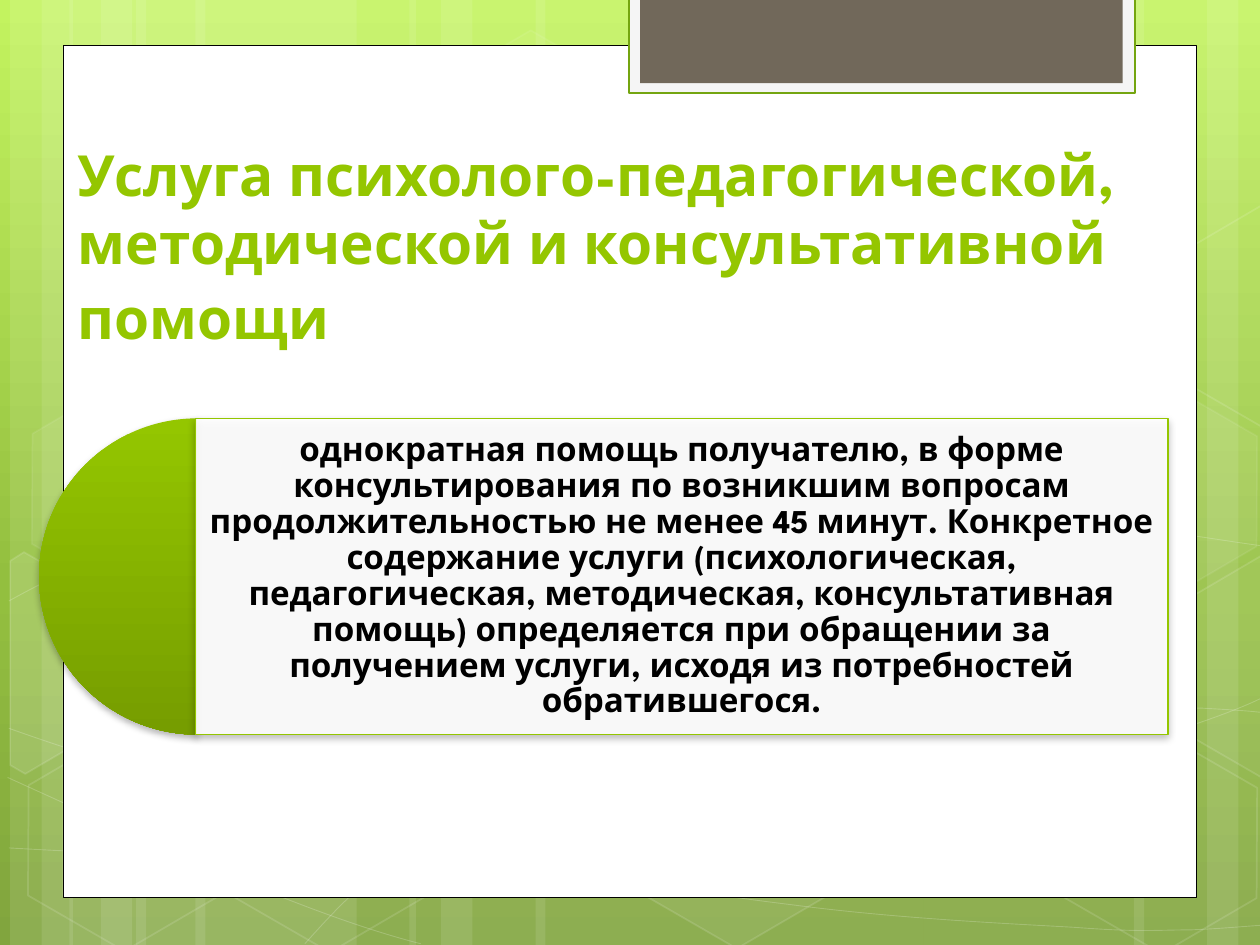
from copy import deepcopy
from dataclasses import dataclass
from math import cos, radians, sin
from lxml.etree import SubElement
from pptx import Presentation
from pptx.dml.color import RGBColor
from pptx.enum.shapes import MSO_SHAPE
from pptx.enum.text import MSO_ANCHOR, PP_ALIGN
from pptx.oxml.ns import qn
from pptx.util import Inches, Pt

WHITE = RGBColor(0xFF, 0xFF, 0xFF)
BLACK = RGBColor(0x00, 0x00, 0x00)
LIME = RGBColor(0x94, 0xC6, 0x00)
DARK_LIME = RGBColor(0x76, 0x9D, 0x00)
TAB_GREEN = RGBColor(0x74, 0xA5, 0x10)
TAB_GREY = RGBColor(0xF5, 0xF5, 0xF5)
TAB_BROWN = RGBColor(0x71, 0x68, 0x5A)
SKY = [(0, RGBColor(0xC3, 0xF3, 0x5F)), (0.62, RGBColor(0x93, 0xBF, 0x3F)),
       (1, RGBColor(0x81, 0xA5, 0x3E))]
FONT = "League Spartan"
TILT = 30
TITLE = "Услуга психолого-педагогической, методической и консультативной помощи"
BODY = ("однократная помощь получателю, в форме консультирования по возникшим вопросам "
        "продолжительностью не менее 45 минут. Конкретное содержание услуги (психологическая, "
        "педагогическая, методическая, консультативная помощь) определяется при обращении за "
        "получением услуги, исходя из потребностей обратившегося.")


@dataclass
class Style:
    fill: RGBColor | None = None
    fill_alpha: int = 100
    line: RGBColor | None = None
    line_width: float = 1
    line_alpha: int = 100


@dataclass
class Hexagon:
    left: float
    top: float
    fill_alpha: int
    line_alpha: int


@dataclass
class CutHexagon:
    center: tuple
    fill_alpha: int
    corners: list


@dataclass
class Wave:
    knots: list
    straight: int | None = None


STRIPES = [(1.08, 1.75), (0.08, 0.5), (0.33, 0.83), (1.55, 1.75), (0.55, 0.5), (0.8, 0.83),
           (7.33, 1.75), (9.58, 0.5), (9, 0.83), (4.25, 3.08), (3.25, 0.5), (3.5, 0.83)]
WAVES = [
    Wave([(0.07, 6.73), (0.61, 6.76), (1.15, 6.79), (1.9, 6.78), (2.65, 6.77), (3.58, 6.75),
          (4.58, 6.65), (5.58, 6.55), (7, 6.36), (7.92, 6.17), (8.83, 5.98), (9.77, 5.68),
          (10.07, 5.51)]),
    Wave([(0.07, 4.77), (0.36, 4.61), (0.65, 4.46), (1.21, 4.31), (1.78, 4.16), (2.59, 3.94),
          (3.47, 3.87), (4.36, 3.8), (5.44, 3.79), (6.54, 3.87), (7.64, 3.95), (9.47, 4.26),
          (10.07, 4.34)]),
    Wave([(0.06, 6.17), (1.27, 6.72), (2.47, 7.27), (3.34, 7.49)]),
    Wave([(0.07, 5.78), (0.38, 5.89), (0.7, 6), (1.28, 6.16), (1.86, 6.31), (2.73, 6.56),
          (3.57, 6.73), (4.4, 6.9), (5.45, 7.08), (6.28, 7.18), (7.11, 7.29), (8, 7.33),
          (8.53, 7.36), (9.05, 7.4), (9.19, 7.38), (9.45, 7.38), (9.71, 7.37), (9.89, 7.35),
          (10.07, 7.34)]),
    Wave([(2.42, 7.49), (2.6, 7.29), (2.78, 7.09), (3.02, 6.91), (3.26, 6.73), (3.6, 6.53),
          (3.88, 6.39), (4.16, 6.25), (4.33, 6.19), (4.7, 6.09), (5.06, 5.99), (5.73, 5.85),
          (6.08, 5.78), (6.44, 5.71), (6.49, 5.71), (6.8, 5.69), (7.11, 5.66), (7.6, 5.63),
          (7.94, 5.62), (8.29, 5.61), (8.86, 5.62), (8.86, 5.62), (9.53, 5.62), (9.71, 5.63),
          (9.88, 5.64), (9.97, 5.65), (10.06, 5.66), (10.03, 5.65), (10.06, 5.66)], 22),
]
HEXAGONS = [Hexagon(3.34, 0.36, 4, 8), Hexagon(4.97, 5.89, 6, 12), Hexagon(0.11, 5.91, 0, 12),
            Hexagon(0.14, 3.12, 7, 8), Hexagon(1.74, 5.92, 0, 12), Hexagon(7.53, 4.53, 10, 12),
            Hexagon(8.34, 5.93, 0, 12), Hexagon(8.34, 3.14, 7, 8)]
CUT_HEXAGONS = [
    CutHexagon((0.36, 5.35), 10, [(0.08, 4.45), (0.19, 4.38), (0.96, 4.82), (0.95, 5.7),
                                  (0.2, 6.14), (0.08, 6.07)]),
    CutHexagon((9.85, 5.2), 4, [(9.26, 4.85), (10.01, 4.41), (10.09, 4.46), (10.09, 6.13),
                                (10.02, 6.17), (9.26, 5.73)]),
    CutHexagon((9.85, 2.41), 0, [(9.26, 2.07), (10.01, 1.63), (10.1, 1.68), (10.09, 3.35),
                                 (10.02, 3.39), (9.26, 2.95)]),
]


def set_alpha(fill_element, percent: int) -> None:
    if percent < 100:
        color = fill_element.find(".//" + qn("a:srgbClr"))
        SubElement(color, qn("a:alpha"), val=str(percent * 1000))


def apply_style(shape, style: Style) -> None:
    shape.shadow.inherit = False
    properties = shape._element.spPr
    if style.fill is None or style.fill_alpha == 0:
        shape.fill.background()
    else:
        shape.fill.solid()
        shape.fill.fore_color.rgb = style.fill
        set_alpha(properties.find(qn("a:solidFill")), style.fill_alpha)
    if style.line is None:
        shape.line.fill.background()
    else:
        shape.line.color.rgb = style.line
        shape.line.width = Pt(style.line_width)
        set_alpha(properties.find(qn("a:ln")), style.line_alpha)


def apply_gradient(fill, element, stops: list) -> None:
    fill.gradient()
    fill.gradient_angle = 270
    stop_list = element.find(".//" + qn("a:gsLst"))
    while len(stop_list) < len(stops):
        stop_list.append(deepcopy(stop_list[0]))
    for stop, (position, color) in zip(fill.gradient_stops, stops):
        stop.position = position
        stop.color.rgb = color


def add_shadow(shape) -> None:
    effects = shape._element.spPr.find(qn("a:effectLst"))
    shadow = SubElement(effects, qn("a:outerShdw"), blurRad=str(Pt(4)), dist=str(Pt(2)),
                        dir="5400000", rotWithShape="0")
    color = SubElement(shadow, qn("a:srgbClr"), val=str(BLACK))
    SubElement(color, qn("a:alpha"), val="28000")


def draw_shape(page, kind: MSO_SHAPE, box: tuple, style: Style):
    shape = page.shapes.add_shape(kind, *map(Inches, box))
    apply_style(shape, style)
    return shape


def draw_outline(page, points: list, closed: bool, style: Style):
    corners = [(Inches(x), Inches(y)) for x, y in points]
    builder = page.shapes.build_freeform(*corners[0])
    builder.add_line_segments(corners[1:], close=closed)
    shape = builder.convert_to_shape()
    apply_style(shape, style)
    return shape


def draw_wave(page, wave: Wave) -> None:
    shape = draw_outline(page, wave.knots, False,
                         Style(line=WHITE, line_width=0.5, line_alpha=20))
    outline = shape._element.find(".//" + qn("a:pathLst"))[0]
    steps = list(outline)
    index = 1
    while index < len(steps):
        if index == wave.straight:
            outline.append(steps[index])
            index += 1
            continue
        curve = SubElement(outline, qn("a:cubicBezTo"))
        for step in steps[index:index + 3]:
            curve.append(step[0])
            outline.remove(step)
        index += 3


def draw_cut_hexagon(page, item: CutHexagon) -> None:
    center_x, center_y = item.center
    cosine, sine = cos(radians(TILT)), sin(radians(TILT))
    upright = [(center_x + (x - center_x) * cosine + (y - center_y) * sine,
                center_y - (x - center_x) * sine + (y - center_y) * cosine)
               for x, y in item.corners]
    shape = draw_outline(page, upright, True, Style(WHITE, item.fill_alpha, WHITE, 1, 12))
    shape.rotation = TILT


def draw_text(page, box: tuple, spans: list, frame_format: dict, para_format: dict) -> None:
    frame = page.shapes.add_textbox(*map(Inches, box)).text_frame
    for name, value in frame_format.items():
        setattr(frame, name, value)
    para = frame.paragraphs[0]
    for name, value in para_format.items():
        setattr(para, name, value)
    for text, size, color in spans:
        span = para.add_run()
        span.text = text
        span.font.color.rgb = color
        for name, value in {"name": FONT, "size": Pt(size), "bold": True}.items():
            setattr(span.font, name, value)


def draw_backdrop(page) -> None:
    apply_gradient(page.background.fill, page._element, SKY)
    for left, width in STRIPES:
        draw_shape(page, MSO_SHAPE.RECTANGLE, (left, 0, width, 7.5), Style(WHITE, 10))
    for wave in WAVES:
        draw_wave(page, wave)
    for item in HEXAGONS:
        hexagon = draw_shape(page, MSO_SHAPE.HEXAGON, (item.left, item.top, 1.75, 1.52),
                             Style(WHITE, item.fill_alpha, WHITE, 1, item.line_alpha))
        hexagon.rotation = TILT
        hexagon.adjustments[0] = 0.285
    for item in CUT_HEXAGONS:
        draw_cut_hexagon(page, item)
    for box, style in [((0.5, 0.36, 9, 6.76), Style(WHITE, line=BLACK, line_width=0.5)),
                       ((4.99, -0.02, 4.02, 0.76), Style(TAB_GREY, line=TAB_GREEN, line_width=1.25)),
                       ((5.08, -0.02, 3.83, 0.68), Style(TAB_BROWN))]:
        draw_shape(page, MSO_SHAPE.RECTANGLE, box, style)


def draw_content(page) -> None:
    draw_text(page, (0.52, 1.2, 8.68, 1.64), [(TITLE, 32.4, LIME), (" ", 36, LIME)],
              {"word_wrap": True, "vertical_anchor": MSO_ANCHOR.BOTTOM}, {})
    pie = draw_shape(page, MSO_SHAPE.PIE, (0.31, 3.32, 2.51, 2.51), Style())
    pie.adjustments[0], pie.adjustments[1] = 54, 162
    apply_gradient(pie.fill, pie._element, [(0, LIME), (1, DARK_LIME)])
    add_shadow(pie)
    body_box = (1.55, 3.32, 7.72, 2.51)
    add_shadow(draw_shape(page, MSO_SHAPE.RECTANGLE, body_box, Style(WHITE, 90, LIME, 0.75)))
    margins = {f"margin_{side}": Inches(0.08) for side in ("left", "right", "top", "bottom")}
    draw_text(page, body_box, [(BODY, 19, BLACK)],
              {"word_wrap": True, "vertical_anchor": MSO_ANCHOR.MIDDLE, **margins},
              {"alignment": PP_ALIGN.CENTER, "line_spacing": 0.9})


def main() -> None:
    deck = Presentation()
    deck.slide_width, deck.slide_height = Inches(10), Inches(7.5)
    page = deck.slides.add_slide(deck.slide_layouts[6])
    draw_backdrop(page)
    draw_content(page)
    deck.save("out.pptx")


if __name__ == "__main__":
    main()
